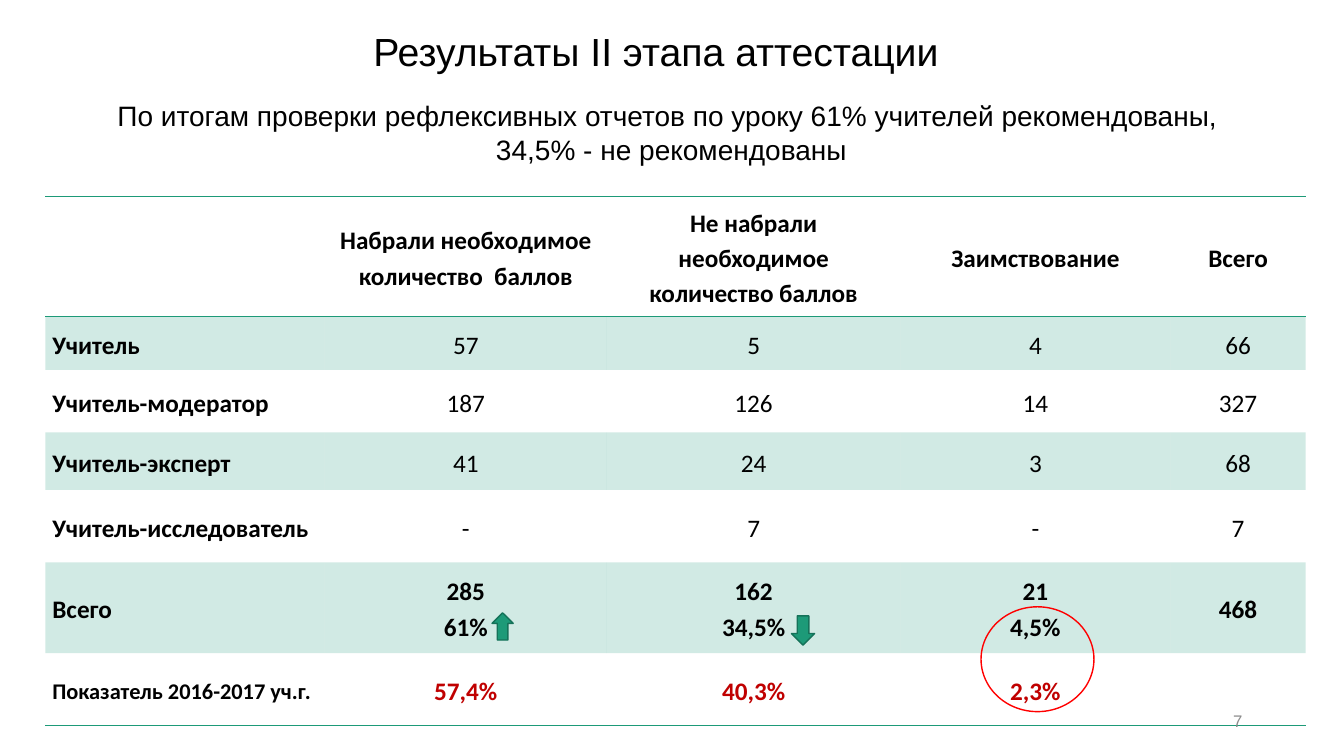
"""Builds the slide with the results of the second attestation stage."""
from lxml import etree
from pptx import Presentation
from pptx import util as u
from pptx.dml.color import RGBColor
from pptx.enum import shapes, text
from pptx.oxml.ns import qn

COLOURS = {"black": "000000", "white": "FFFFFF", "green": "1D9A78", "dark green": "157259",
           "dark red": "C00000", "red": "FF0000", "grey": "8C8C8C"}
NO_STYLE = "{2D5ABB26-0587-4C30-8999-92F81FD0307C}"
CENTRE, LEFT, RIGHT = text.PP_ALIGN.CENTER, text.PP_ALIGN.LEFT, text.PP_ALIGN.RIGHT


def write(frame, lines, size, align, font="Arial", colour="black", bold=False, spacing=1.0):
    """Fills a text frame with equally formatted paragraphs."""
    frame.word_wrap = True
    frame.vertical_anchor = text.MSO_ANCHOR.MIDDLE
    frame.text = lines
    for para in frame.paragraphs:
        para.alignment = align
        para.line_spacing = spacing
        para.font.size = u.Pt(size)
        para.font.name = font
        para.font.bold = bold
        para.font.color.rgb = RGBColor.from_string(COLOURS[colour])


def add_shape(kind, left, top, width, height, fill, line, weight=1):
    """Adds a preset shape without shadow."""
    shape = page.shapes.add_shape(kind, u.Inches(left), u.Inches(top), u.Inches(width), u.Inches(height))
    shape.shadow.inherit = False
    if fill:
        shape.fill.solid()
        shape.fill.fore_color.rgb = RGBColor.from_string(COLOURS[fill])
    else:
        shape.fill.background()
    shape.line.color.rgb = RGBColor.from_string(COLOURS[line])
    shape.line.width = u.Pt(weight)
    return shape


deck = Presentation()
deck.slide_width, deck.slide_height = u.Inches(13.33), u.Inches(7.5)
page = deck.slides.add_slide(deck.slide_layouts[6])

summary = add_shape(shapes.MSO_SHAPE.RECTANGLE, 0.32, 0.93, 12.68, 0.77, "white", "white", 0.5)
write(summary.text_frame,
      "По итогам проверки рефлексивных отчетов по уроку 61% учителей рекомендованы, \n"
      "34,5% - не рекомендованы", 20, CENTRE)

rows = [
    ["", "Набрали необходимое количество  баллов", "Не набрали необходимое количество баллов",
     "Заимствование", "Всего"],
    ["Учитель", "57", "5", "4", "66"],
    ["Учитель-модератор", "187", "126", "14", "327"],
    ["Учитель-эксперт", "41", "24", "3", "68"],
    ["Учитель-исследователь", "-", "7", "-", "7"],
    ["Всего", "285\n61%", "162\n34,5%", "21\n4,5%", "468"],
    ["Показатель 2016-2017 уч.г.", "57,4%", "40,3%", "2,3%", ""],
]
widths = [2.77, 2.8, 2.91, 2.68, 1.34]
heights = [1.19, 0.53, 0.62, 0.57, 0.72, 0.9, 0.72]
last = len(rows) - 1
borders = {0: ["a:lnT", "a:lnB"], last: ["a:lnB"]}

table = page.shapes.add_table(len(rows), len(widths), u.Inches(0.45), u.Inches(1.95),
                              u.Inches(sum(widths)), u.Inches(sum(heights))).table
table.first_row = table.horz_banding = False
table._tbl.tblPr.find(qn("a:tableStyleId")).text = NO_STYLE
for column, width in zip(table.columns, widths):
    column.width = u.Inches(width)
for r, (values, height) in enumerate(zip(rows, heights)):
    table.rows[r].height = u.Inches(height)
    for c, value in enumerate(values):
        cell = table.cell(r, c)
        cell.margin_left = cell.margin_right = u.Inches(0.07)
        cell.margin_top = cell.margin_bottom = 0
        cell.vertical_anchor = text.MSO_ANCHOR.MIDDLE
        write(cell.text_frame, value, 16 if r == last and c == 0 else 18, CENTRE if c else LEFT,
              "Calibri", "dark red" if r == last and c else "black",
              c == 0 or r in (0, last - 1, last), 1.15)
        properties = cell._tc.get_or_add_tcPr()
        if r % 2:
            cell.fill.solid()
            cell.fill.fore_color.rgb = RGBColor.from_string(COLOURS["green"])
            tint = properties.find(".//" + qn("a:srgbClr"))
            etree.SubElement(tint, qn("a:alpha"), val="20000")
        else:
            cell.fill.background()
        for position, tag in enumerate(borders.get(r, [])):
            border = etree.Element(qn(tag), w=str(u.Pt(1)))
            paint = etree.SubElement(border, qn("a:solidFill"))
            etree.SubElement(paint, qn("a:srgbClr"), val=COLOURS["green"])
            properties.insert(position, border)

for words, left, top, width, height, size, align, colour, spacing in [
    ("Результаты IІ этапа аттестации", 2.72, 0.27, 7.57, 0.53, 28, CENTRE, "black", 0.9),
    ("7", 9.42, 6.95, 3, 0.4, 12, RIGHT, "grey", 1.0),
]:
    box = page.shapes.add_textbox(u.Inches(left), u.Inches(top), u.Inches(width), u.Inches(height))
    write(box.text_frame, words, size, align, colour=colour, spacing=spacing)

add_shape(shapes.MSO_SHAPE.OVAL, 9.73, 6.02, 1.12, 1.04, None, "red")
add_shape(shapes.MSO_SHAPE.DOWN_ARROW, 7.85, 6.11, 0.23, 0.29, "green", "dark green")
add_shape(shapes.MSO_SHAPE.UP_ARROW, 4.88, 6.08, 0.21, 0.27, "green", "dark green")

deck.save("out.pptx")
